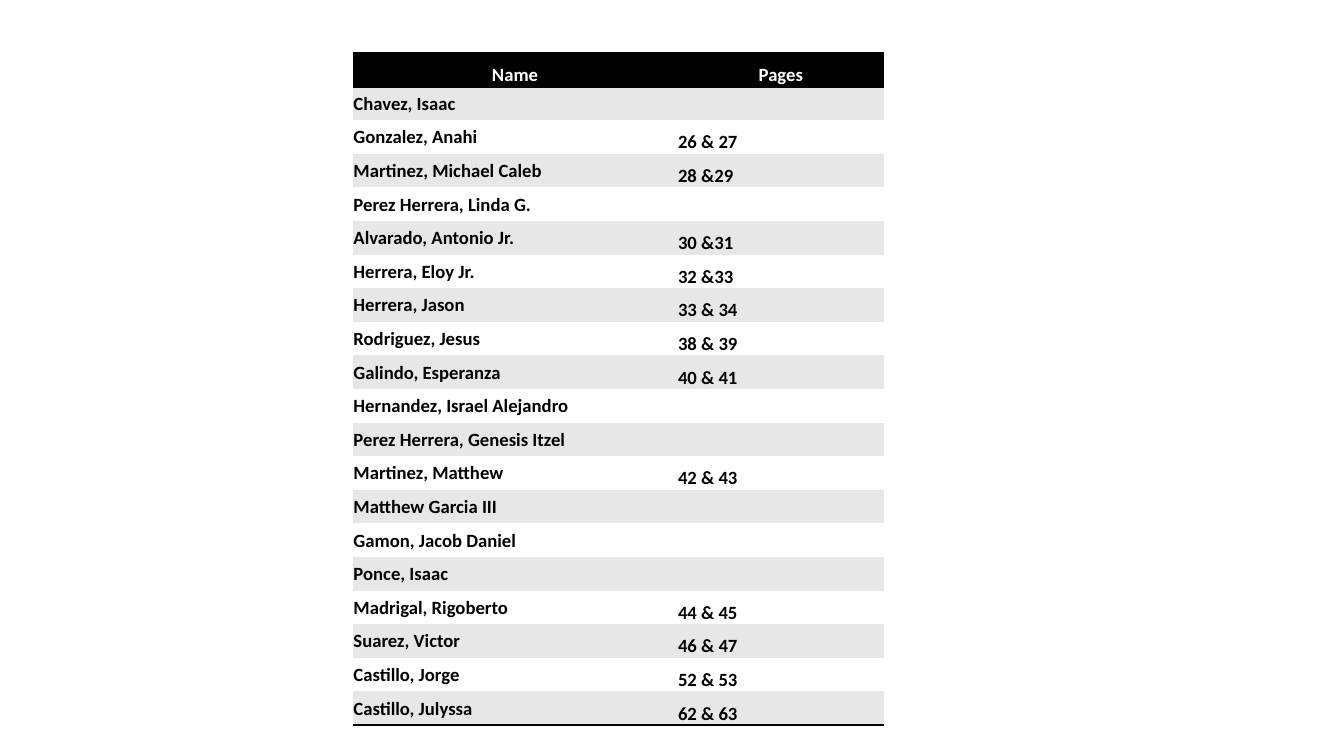
import pptx
import pptx.util
import pptx.dml.color
import pptx.enum.text
import pptx.oxml
import pptx.oxml.ns

# Content
HEAD = ("Name", "Pages")
ROWS = [
    ("Chavez, Isaac", ""),
    ("Gonzalez, Anahi", "26 & 27"),
    ("Martinez, Michael Caleb", "28 &29"),
    ("Perez Herrera, Linda G.", ""),
    ("Alvarado, Antonio Jr.", "30 &31"),
    ("Herrera, Eloy Jr.", "32 &33"),
    ("Herrera, Jason", "33 & 34"),
    ("Rodriguez, Jesus", "38 & 39"),
    ("Galindo, Esperanza", "40 & 41"),
    ("Hernandez, Israel Alejandro", ""),
    ("Perez Herrera, Genesis Itzel", ""),
    ("Martinez, Matthew", "42 & 43"),
    ("Matthew Garcia III", ""),
    ("Gamon, Jacob Daniel", ""),
    ("Ponce, Isaac", ""),
    ("Madrigal, Rigoberto", "44 & 45"),
    ("Suarez, Victor", "46 & 47"),
    ("Castillo, Jorge", "52 & 53"),
    ("Castillo, Julyssa", "62 & 63"),
]
BLACK, WHITE, GREY = "000000", "FFFFFF", "E7E7E7"
LEFT, TOP, ROW = 5.25, 0.79, 0.5
COLS = (4.83, 3.08)
PLAIN = "{2D5ABB26-0587-4C30-8999-92F81FD0307C}"  # table style without grid

inch = pptx.util.Inches
Anchor = pptx.enum.text.MSO_ANCHOR
Align = pptx.enum.text.PP_ALIGN


def color(code):
    return pptx.dml.color.RGBColor.from_string(code)


def rule(cell, side):
    """Draw a 2 pt black line on one side of a cell."""
    line = pptx.oxml.parse_xml(
        f'<a:{side} {pptx.oxml.ns.nsdecls("a")} w="{pptx.util.Pt(2)}">'
        f'<a:solidFill><a:srgbClr val="{BLACK}"/></a:solidFill></a:{side}>')
    cell._tc.get_or_add_tcPr().insert(0, line)


def write(cell, text, ink, align, anchor):
    cell.margin_left = cell.margin_right = cell.margin_top = inch(0.01)
    cell.margin_bottom = 0
    cell.vertical_anchor = anchor
    cell.text = text
    para = cell.text_frame.paragraphs[0]
    para.alignment = align
    font = para.font
    font.name, font.size, font.bold = "Calibri", pptx.util.Pt(20), True
    font.color.rgb = color(ink)


def build():
    deck = pptx.Presentation()
    deck.slide_width, deck.slide_height = inch(20), inch(11.25)
    slide = deck.slides.add_slide(deck.slide_layouts[6])

    # Table frame
    lines = [HEAD] + ROWS
    table = slide.shapes.add_table(
        len(lines), len(COLS), inch(LEFT), inch(TOP),
        inch(sum(COLS)), inch(ROW * len(lines))).table
    table._tbl.tblPr.find(pptx.oxml.ns.qn("a:tableStyleId")).text = PLAIN
    for col, width in zip(table.columns, COLS):
        col.width = inch(width)

    # Cells: black head, then grey and white bands
    last = len(lines) - 1
    for r, line in enumerate(lines):
        head = r == 0
        back = BLACK if head else GREY if r % 2 else WHITE
        for c, text in enumerate(line):
            cell = table.cell(r, c)
            cell.fill.solid()
            cell.fill.fore_color.rgb = color(back)
            if text:
                write(cell, text, WHITE if head else BLACK,
                      Align.CENTER if head else Align.LEFT,
                      Anchor.BOTTOM if head or c else Anchor.MIDDLE)
            if r in (0, last):
                rule(cell, "lnB")
            if head:
                rule(cell, "lnT")

    deck.save("out.pptx")


if __name__ == "__main__":
    build()
